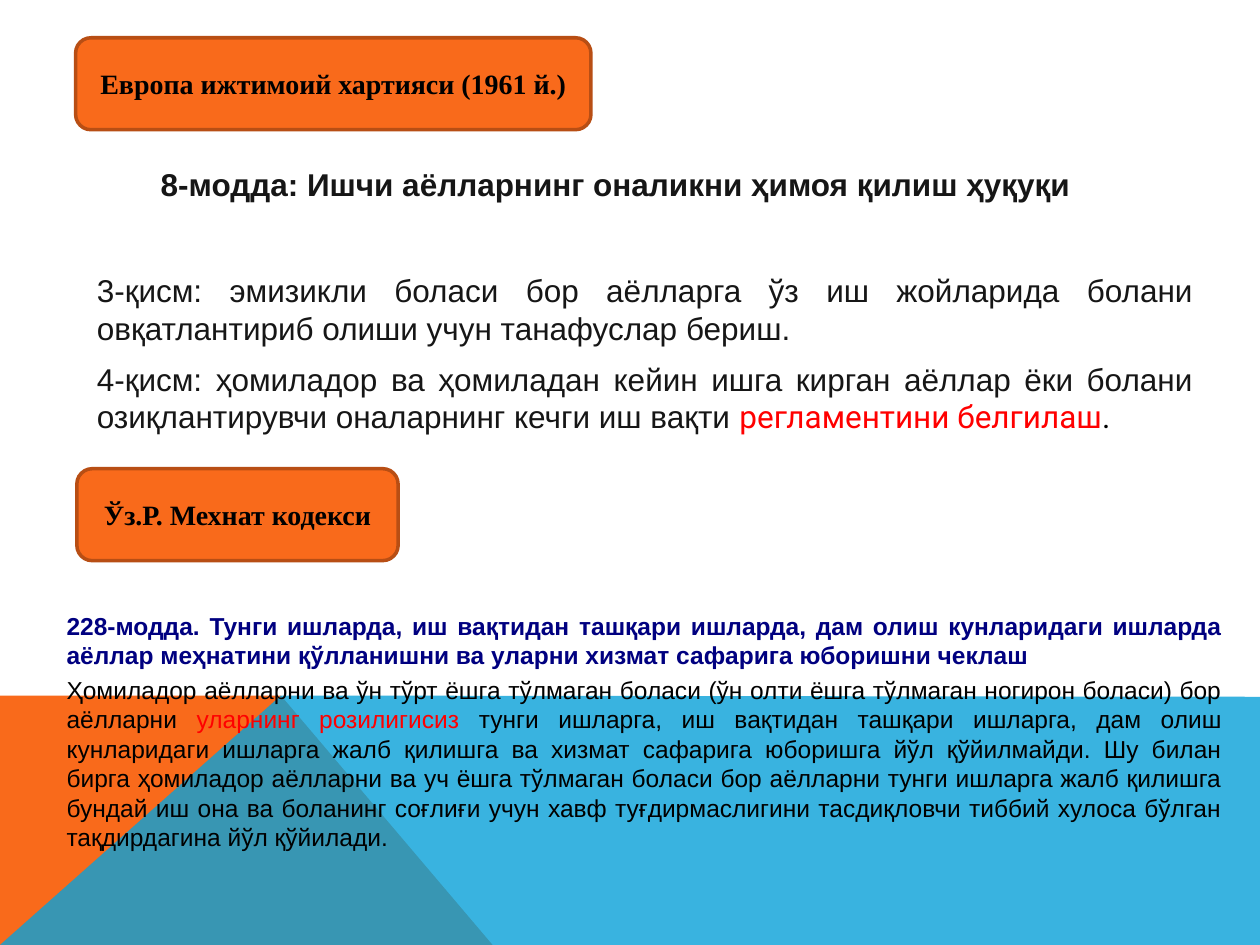
import pptx
import pptx.dml.color
import pptx.enum.shapes
import pptx.enum.text
import pptx.oxml
import pptx.oxml.ns
import pptx.util
from pptx.util import Inches, Pt

ALIGN = pptx.enum.text.PP_ALIGN
ORANGE, BLUE, BORDER = "F96A1B", "08A1D9", "B84E14"
BLACK, DARK, RED, NAVY = "000000", "161616", "FF0000", "000080"

TRIANGLES = [
    (ORANGE, 100, [(0, 7.5), (0, 5.52), (2.23, 5.52), (3.91, 7.5)]),
    (BLUE, 80, [(0, 7.5), (2.23, 5.52), (10, 5.53), (10, 7.5)]),
]

BADGES = [
    ("Европа ижтимоий хартияси (1961 й.)", (0.6, 0.3, 4.09, 0.73)),
    ("Ўз.Р. Мехнат кодекси", (0.61, 3.72, 2.55, 0.73)),
]

TEXTS = [
    {"at": (0.83, 1.26, 8.11, 0.4), "size": 18, "paragraphs": [
        {"align": ALIGN.CENTER, "after": 7.5, "bold": True, "spans": [
            ("8-модда: Ишчи аёлларнинг оналикни ҳимоя қилиш ҳуқуқи", DARK, "Arial")]},
    ]},
    {"at": (0.67, 2.1, 8.9, 1.42), "size": 18, "paragraphs": [
        {"after": 7.5, "spans": [
            ("3-қисм: эмизикли боласи бор аёлларга ўз иш жойларида болани "
             "овқатлантириб олиши учун танафуслар бериш.", DARK, "Arial")]},
        {"after": 7.5, "spans": [
            ("4-қисм: ҳомиладор ва ҳомиладан кейин ишга кирган аёллар ёки болани "
             "озиқлантирувчи оналарнинг кечги иш вақти ", DARK, "Arial"),
            ("регламентини белгилаш", RED, "Roboto"),
            (".", BLACK, "Roboto")]},
    ]},
    {"at": (0.43, 4.8, 9.37, 2.03), "size": 14, "paragraphs": [
        {"before": 6, "after": 3, "bold": True, "spans": [
            ("228-модда. Тунги ишларда, иш вақтидан ташқари ишларда, дам олиш "
             "кунларидаги ишларда аёллар меҳнатини қўлланишни ва уларни хизмат "
             "сафарига юборишни чеклаш", NAVY, "Arial")]},
        {"spans": [
            ("Ҳомиладор аёлларни ва ўн тўрт ёшга тўлмаган боласи (ўн олти ёшга "
             "тўлмаган ногирон боласи) бор аёлларни ", BLACK, "Arial"),
            ("уларнинг розилигисиз ", RED, "Arial"),
            ("тунги ишларга, иш вақтидан ташқари ишларга, дам олиш кунларидаги "
             "ишларга жалб қилишга ва хизмат сафарига юборишга йўл қўйилмайди. "
             "Шу билан бирга ҳомиладор аёлларни ва уч ёшга тўлмаган боласи бор "
             "аёлларни тунги ишларга жалб қилишга бундай иш она ва боланинг "
             "соғлиғи учун хавф туғдирмаслигини тасдиқловчи тиббий хулоса бўлган "
             "тақдирдагина йўл қўйилади.", BLACK, "Arial")]},
    ]},
]


def paint(color_format, value):
    color_format.rgb = pptx.dml.color.RGBColor.from_string(value)


def fill_shape(shape, color):
    shape.shadow.inherit = False
    shape.fill.solid()
    paint(shape.fill.fore_color, color)


def add_triangle(page, color, opacity, points):
    corners = [(Inches(x), Inches(y)) for x, y in points]
    builder = page.shapes.build_freeform(*corners[0])
    builder.add_line_segments(corners[1:], close=True)
    shape = builder.convert_to_shape()
    fill_shape(shape, color)
    shape.line.fill.background()
    if opacity < 100:
        color_node = shape.fill._xPr.find(".//" + pptx.oxml.ns.qn("a:srgbClr"))
        alpha = pptx.oxml.parse_xml(
            f'<a:alpha {pptx.oxml.ns.nsdecls("a")} val="{opacity * 1000}"/>')
        color_node.append(alpha)


def add_badge(page, text, place):
    badge = page.shapes.add_shape(
        pptx.enum.shapes.MSO_SHAPE.ROUNDED_RECTANGLE, *map(Inches, place))
    fill_shape(badge, ORANGE)
    paint(badge.line.color, BORDER)
    badge.line.width = Pt(2)
    frame = badge.text_frame
    frame.word_wrap = True
    frame.vertical_anchor = pptx.enum.text.MSO_ANCHOR.MIDDLE
    para = frame.paragraphs[0]
    para.text = text
    para.alignment = ALIGN.CENTER
    para.font.name = "Times New Roman"
    para.font.size = Pt(16)
    para.font.bold = True
    paint(para.font.color, BLACK)


def add_text(page, at, size, paragraphs):
    frame = page.shapes.add_textbox(*map(Inches, at)).text_frame
    frame.word_wrap = True
    frame.auto_size = pptx.enum.text.MSO_AUTO_SIZE.SHAPE_TO_FIT_TEXT
    for index, content in enumerate(paragraphs):
        para = frame.add_paragraph() if index else frame.paragraphs[0]
        para.alignment = content.get("align", ALIGN.JUSTIFY)
        para.space_before = Pt(content.get("before", 0))
        para.space_after = Pt(content.get("after", 0))
        para.font.size = Pt(size)
        para.font.bold = content.get("bold", False)
        for text, color, font in content["spans"]:
            span = para.add_run()
            span.text = text
            span.font.name = font
            paint(span.font.color, color)


def main():
    deck = pptx.Presentation()
    deck.slide_width, deck.slide_height = Inches(10), Inches(7.5)
    page = deck.slides.add_slide(deck.slide_layouts[6])
    for triangle in TRIANGLES:
        add_triangle(page, *triangle)
    for badge in BADGES:
        add_badge(page, *badge)
    for text in TEXTS:
        add_text(page, **text)
    deck.save("out.pptx")


if __name__ == "__main__":
    main()
